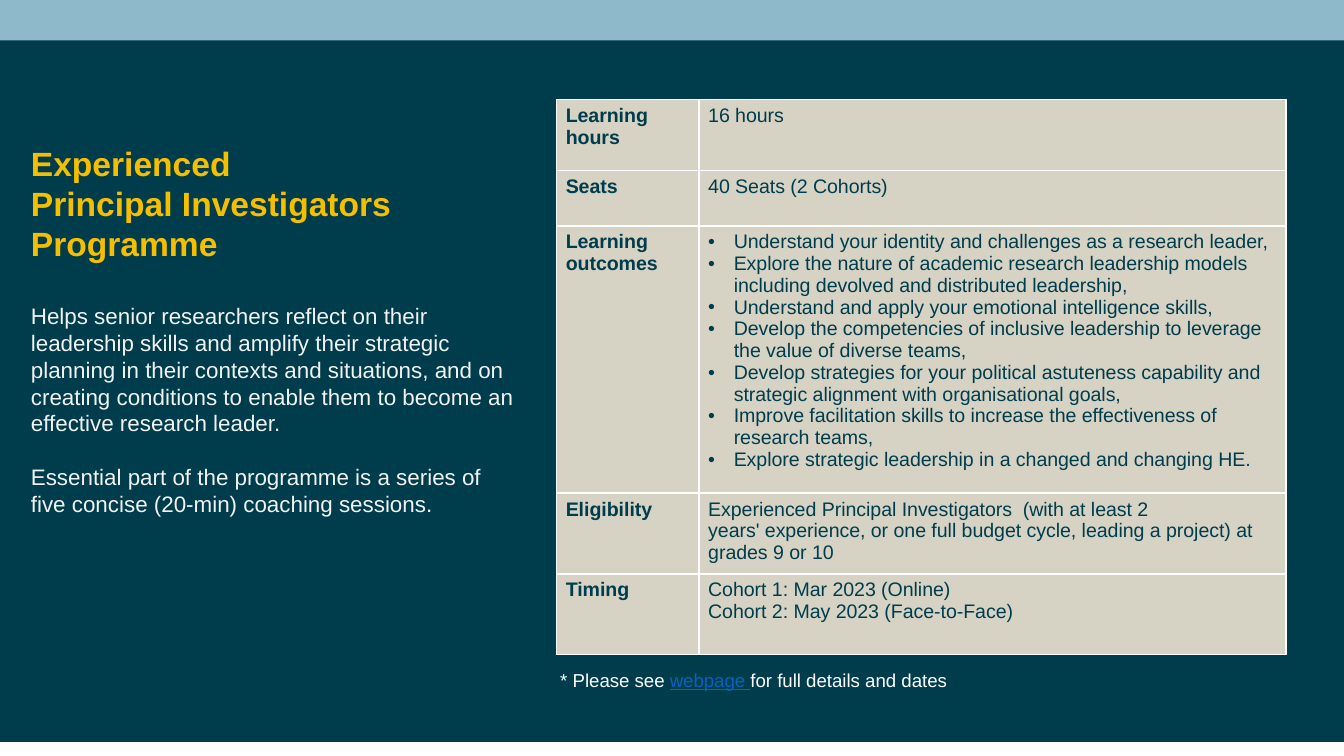
"""Build the Experienced Principal Investigators Programme slide."""
import dataclasses

import pptx
import pptx.dml.color
import pptx.enum.shapes
import pptx.enum.text
import pptx.oxml
import pptx.oxml.ns
import pptx.util
from pptx.util import Inches

NAVY, SKY, SAND, GOLD = "003D4C", "8DB9CA", "D6D2C4", "F6BE00"
WHITE, PALE, LINK = "FFFFFF", "F2F2F2", "0563C1"
NBSP = chr(160)
CELL = {"size": 10.5, "color": NAVY}
HEADING = {"size": 18, "color": GOLD, "bold": True}
BODY = {"size": 12, "color": PALE, "bold": False}
NOTE = {"size": 10, "color": WHITE}


@dataclasses.dataclass
class Bar:
    top: float
    height: float
    color: str


@dataclasses.dataclass
class Row:
    label: str
    lines: list[str]
    height: float
    bulleted: bool = False


@dataclasses.dataclass
class Line:
    text: str
    style: dict
    before: float = 0


BARS = [Bar(0, 0.33, SKY), Bar(0.3, 5.22, NAVY)]

ROWS = [
    Row("Learning hours", ["16 hours"], 0.53),
    Row("Seats", ["40 Seats (2 Cohorts)"], 0.41),
    Row("Learning outcomes", [
        "Understand your identity and challenges as a research leader,",
        "Explore the nature of academic research leadership models including "
        "devolved and distributed leadership,",
        "Understand and apply your emotional intelligence skills,",
        "Develop the competencies of inclusive leadership to leverage the value "
        "of diverse teams,",
        "Develop strategies for your political astuteness capability and "
        "strategic alignment with organisational goals,",
        "Improve facilitation skills to increase the effectiveness of research teams,",
        "Explore strategic leadership in a changed and changing HE.",
    ], 1.99, True),
    Row("Eligibility", [
        f"Experienced Principal Investigators{NBSP} (with at least 2 "
        f"years'{NBSP}experience, or one full budget cycle, leading a project) "
        "at grades 9 or 10",
    ], 0.6),
    Row("Timing", ["Cohort 1: Mar 2023 (Online)", "Cohort 2: May 2023 (Face-to-Face)"], 0.6),
]

INTRO = [
    Line("Experienced", HEADING),
    Line("Principal Investigators", HEADING),
    Line("Programme", HEADING),
    Line("Helps senior researchers reflect on their leadership skills and amplify "
         "their strategic planning in their contexts and situations, and on creating "
         "conditions to enable them to become an effective research leader.", BODY, 20.7),
    Line("Essential part of the programme is a series of five concise (20-min) "
         "coaching sessions.", BODY, 14.5),
]


def rgb(value: str) -> pptx.dml.color.RGBColor:
    return pptx.dml.color.RGBColor.from_string(value)


def add_run(p, text: str, style: dict) -> None:
    r = p.add_run()
    r.text = text
    r.font.name = "Arial"
    for name, value in style.items():
        if name == "color":
            r.font.color.rgb = rgb(value)
        else:
            setattr(r.font, name, pptx.util.Pt(value) if name == "size" else value)


def next_paragraph(tf, index: int):
    return tf.add_paragraph() if index else tf.paragraphs[0]


def add_bullet(p) -> None:
    pPr = p._p.get_or_add_pPr()
    pPr.set("marL", str(Inches(0.19)))
    pPr.set("indent", str(-Inches(0.19)))
    ns = pptx.oxml.ns.nsdecls("a")
    for xml in (f'<a:buClr {ns}><a:srgbClr val="{NAVY}"/></a:buClr>',
                f'<a:buFont {ns} typeface="Arial"/>',
                f'<a:buChar {ns} char="•"/>'):
        pPr.append(pptx.oxml.parse_xml(xml))


def add_bar(s, bar: Bar) -> None:
    sp = s.shapes.add_shape(pptx.enum.shapes.MSO_SHAPE.RECTANGLE, 0, Inches(bar.top),
                            Inches(10), Inches(bar.height))
    sp.shadow.inherit = False
    sp.fill.solid()
    sp.fill.fore_color.rgb = rgb(bar.color)
    sp.line.fill.background()


def fill_cell(cell, lines: list[str], bold: bool, bulleted: bool = False) -> None:
    for side in ("left", "right", "top", "bottom"):
        inset = 0.07 if side in ("left", "right") else 0.04
        setattr(cell, f"margin_{side}", Inches(inset))
    tcPr = cell._tc.get_or_add_tcPr()
    for edge in "LRTB":
        tcPr.append(pptx.oxml.parse_xml(
            f'<a:ln{edge} {pptx.oxml.ns.nsdecls("a")} w="12700"><a:solidFill>'
            f'<a:srgbClr val="{WHITE}"/></a:solidFill></a:ln{edge}>'))
    cell.fill.solid()
    cell.fill.fore_color.rgb = rgb(SAND)
    for i, text in enumerate(lines):
        p = next_paragraph(cell.text_frame, i)
        if bulleted:
            add_bullet(p)
        add_run(p, text, CELL | {"bold": bold})


def add_details(s, rows: list[Row]) -> None:
    height = sum(row.height for row in rows)
    table = s.shapes.add_table(len(rows), 2, Inches(4.14), Inches(0.74),
                               Inches(5.43), Inches(height)).table
    table.first_row = table.horz_banding = False
    for column, width in zip(table.columns, (1.06, 4.37)):
        column.width = Inches(width)
    for i, row in enumerate(rows):
        table.rows[i].height = Inches(row.height)
        fill_cell(table.cell(i, 0), [row.label], True)
        fill_cell(table.cell(i, 1), row.lines, False, row.bulleted)


def write_title(s, lines: list[Line]) -> None:
    sp = s.shapes.title
    sp.element.getparent().append(sp.element)
    box = {"left": 0.13, "top": 1.01, "width": 3.8, "height": 2.93}
    for name, value in box.items():
        setattr(sp, name, Inches(value))
    tf = sp.text_frame
    frame = {"word_wrap": True, "auto_size": pptx.enum.text.MSO_AUTO_SIZE.NONE,
             "vertical_anchor": pptx.enum.text.MSO_ANCHOR.TOP}
    for name, value in frame.items():
        setattr(tf, name, value)
    for i, line in enumerate(lines):
        p = next_paragraph(tf, i)
        p.alignment = pptx.enum.text.PP_ALIGN.LEFT
        p.space_before = pptx.util.Pt(line.before)
        add_run(p, line.text, line.style)


def add_note(s) -> None:
    sp = s.shapes.add_textbox(Inches(4.07), Inches(4.93), Inches(4.22), Inches(0.27))
    sp.text_frame.word_wrap = True
    p = sp.text_frame.paragraphs[0]
    add_run(p, "* Please see ", NOTE)
    add_run(p, "webpage ", NOTE | {"color": LINK, "underline": True})
    add_run(p, "for full details and dates", NOTE)


def main() -> None:
    prs = pptx.Presentation()
    prs.slide_width, prs.slide_height = Inches(10), Inches(10) * 9 // 16
    s = prs.slides.add_slide(prs.slide_layouts[5])
    for bar in BARS:
        add_bar(s, bar)
    add_details(s, ROWS)
    write_title(s, INTRO)
    add_note(s)
    prs.save("out.pptx")


if __name__ == "__main__":
    main()
